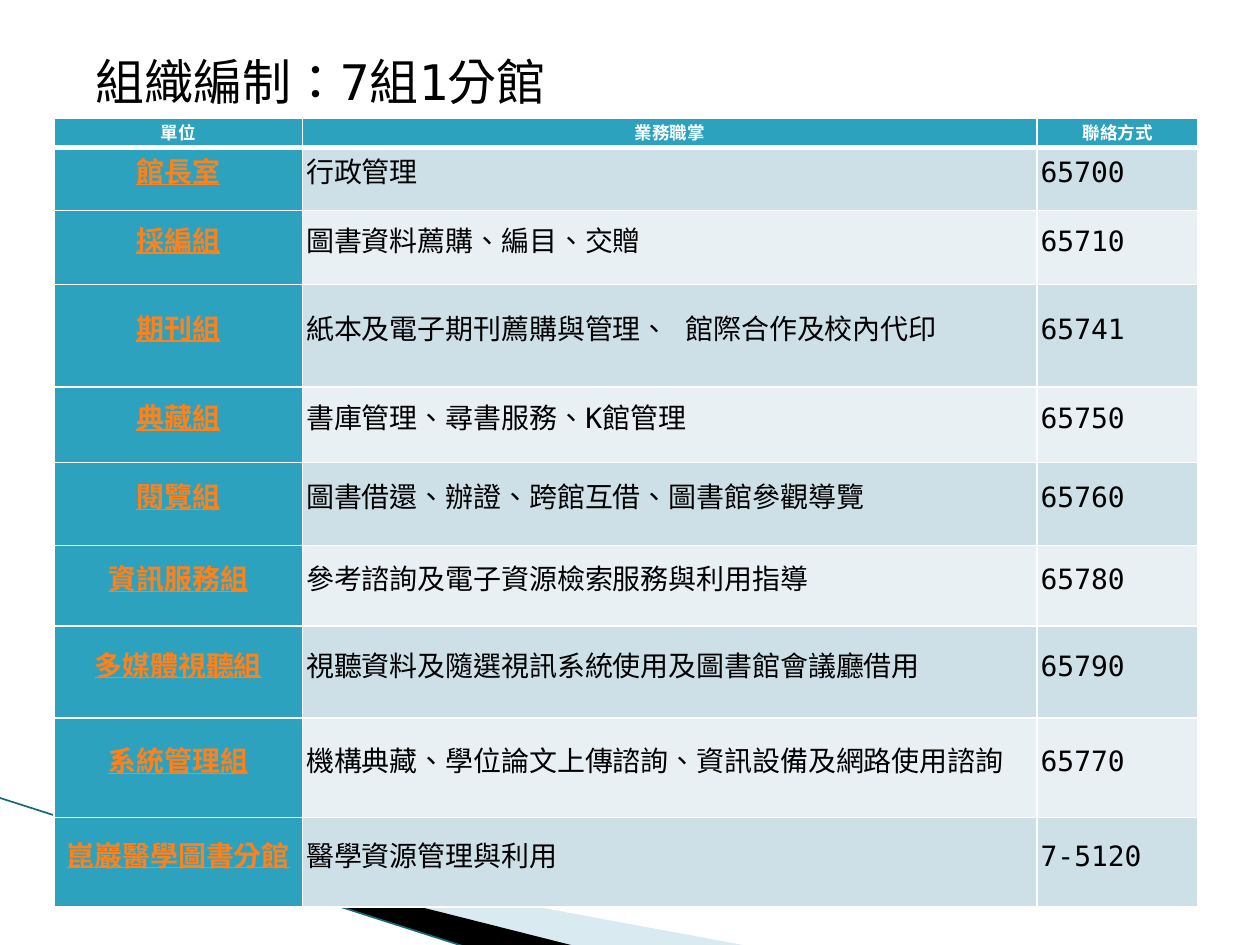
import pptx
import pptx.util
import pptx.dml.color
import pptx.enum.lang
import pptx.enum.shapes
import pptx.enum.text
import pptx.oxml.ns
from lxml import etree

Inches, Pt = pptx.util.Inches, pptx.util.Pt
RGBColor = pptx.dml.color.RGBColor
qn = pptx.oxml.ns.qn
PP_ALIGN = pptx.enum.text.PP_ALIGN

BLACK = RGBColor(0x00, 0x00, 0x00)
WHITE = RGBColor(0xFF, 0xFF, 0xFF)
TEAL = RGBColor(0x2D, 0xA2, 0xBF)
DARK_TEAL = RGBColor(0x16, 0x69, 0x7A)
PALE_TEAL = RGBColor(0xA0, 0xCB, 0xDC)
ORANGE = RGBColor(0xFF, 0x81, 0x19)
BANDS = RGBColor(0xCD, 0xE0, 0xE8), RGBColor(0xE8, 0xF0, 0xF4)

HEADER = ("單位", "業務職掌", "聯絡方式")
UNITS = [
    ("館長室", "行政管理", "65700"),
    ("採編組", "圖書資料薦購、編目、交贈", "65710"),
    ("期刊組", "紙本及電子期刊薦購與管理、 館際合作及校內代印", "65741"),
    ("典藏組", "書庫管理、尋書服務、K館管理", "65750"),
    ("閱覽組", "圖書借還、辦證、跨館互借、圖書館參觀導覽", "65760"),
    ("資訊服務組", "參考諮詢及電子資源檢索服務與利用指導", "65780"),
    ("多媒體視聽組", "視聽資料及隨選視訊系統使用及圖書館會議廳借用", "65790"),
    ("系統管理組", "機構典藏、學位論文上傳諮詢、資訊設備及網路使用諮詢", "65770"),
    ("崑巖醫學圖書分館", "醫學資源管理與利用", "7-5120"),
]
COL_WIDTHS = (1.97, 5.83, 1.28)
ROW_HEIGHTS = (0.23, 0.5, 0.59, 0.81, 0.6, 0.66, 0.64, 0.73, 0.79, 0.71)

HEADER_FORMAT = {"size": Pt(10), "bold": True, "color": WHITE}
UNIT_FORMAT = {"size": Pt(16), "bold": True, "underline": True, "color": ORANGE}
BODY_FORMAT = {"size": Pt(16), "bold": False, "color": BLACK}


class SlideBuilder:
    font = "DejaVu Sans Mono"
    cell_format = {
        "margin_left": Inches(0.03), "margin_right": Inches(0.03),
        "margin_top": Inches(0.02), "margin_bottom": Inches(0.02),
        "vertical_anchor": pptx.enum.text.MSO_ANCHOR.MIDDLE,
    }

    def __init__(self, slide):
        self.s = slide

    def run(self, p, text, formats):
        r = p.add_run()
        r.text = text
        r.font.name = self.font
        r.font.language_id = pptx.enum.lang.MSO_LANGUAGE_ID.TRADITIONAL_CHINESE
        for name, value in formats.items():
            if name == "color":
                r.font.color.rgb = value
            else:
                setattr(r.font, name, value)
        etree.SubElement(r.font._element, qn("a:ea"), typeface=self.font)

    def text(self, left, top, width, height, text, formats):
        tf = self.s.shapes.add_textbox(
            Inches(left), Inches(top), Inches(width), Inches(height)).text_frame
        tf.word_wrap = True
        self.run(tf.paragraphs[0], text, formats)

    def polygon(self, points, color, alpha=100):
        start, *rest = [(Inches(x), Inches(y)) for x, y in points]
        fb = self.s.shapes.build_freeform(*start)
        fb.add_line_segments(rest)
        sp = fb.convert_to_shape()
        sp.shadow.inherit = False
        sp.line.fill.background()
        sp.fill.solid()
        sp.fill.fore_color.rgb = color
        if alpha < 100:
            clr = sp._element.spPr.find(".//" + qn("a:srgbClr"))
            etree.SubElement(clr, qn("a:alpha"), val=str(alpha * 1000))

    def line(self, x1, y1, x2, y2, color, width):
        sp = self.s.shapes.add_connector(
            pptx.enum.shapes.MSO_CONNECTOR.STRAIGHT,
            Inches(x1), Inches(y1), Inches(x2), Inches(y2))
        sp.line.color.rgb = color
        sp.line.width = Pt(width)
        etree.SubElement(sp._element.spPr, qn("a:effectLst"))

    def borders(self, cell, widths):
        tcPr = cell._tc.get_or_add_tcPr()
        for i, (side, width) in enumerate(widths.items()):
            ln = etree.Element(qn("a:ln" + side), w=str(Pt(width)))
            fill = etree.SubElement(ln, qn("a:solidFill"))
            etree.SubElement(fill, qn("a:srgbClr"), val=str(WHITE))
            tcPr.insert(i, ln)

    def cell(self, cell, text, fill, formats, align, widths):
        for name, value in self.cell_format.items():
            setattr(cell, name, value)
        cell.fill.solid()
        cell.fill.fore_color.rgb = fill
        self.borders(cell, widths)
        p = cell.text_frame.paragraphs[0]
        p.alignment = align
        p.line_spacing = Pt(12)
        self.run(p, text, formats)

    def table(self, left, top, rows):
        tbl = self.s.shapes.add_table(
            len(rows), len(COL_WIDTHS), Inches(left), Inches(top),
            Inches(sum(COL_WIDTHS)), Inches(sum(ROW_HEIGHTS))).table
        for col, width in zip(tbl.columns, COL_WIDTHS):
            col.width = Inches(width)
        for row, height in zip(tbl.rows, ROW_HEIGHTS):
            row.height = Inches(height)
        for i, row in enumerate(rows):
            # A thick rule separates the header from the body
            widths = {"L": 1, "R": 1, "T": 3 if i == 1 else 1, "B": 3 if i == 0 else 1}
            for j, text in enumerate(row):
                if i == 0:
                    style = TEAL, HEADER_FORMAT, PP_ALIGN.CENTER
                elif j == 0:
                    style = TEAL, UNIT_FORMAT, PP_ALIGN.CENTER
                else:
                    style = BANDS[(i - 1) % 2], BODY_FORMAT, PP_ALIGN.LEFT
                self.cell(tbl.cell(i, j), text, *style, widths)


def main():
    prs = pptx.Presentation()
    prs.slide_width, prs.slide_height = Inches(10), Inches(7.5)
    b = SlideBuilder(prs.slides.add_slide(prs.slide_layouts[6]))

    # Corner decoration
    b.polygon([(0.55, 6.51), (5.95, 7.51), (4.56, 7.51), (0.55, 6.5)], PALE_TEAL, 40)
    b.polygon([(0.53, 6.49), (4.57, 7.51), (3.72, 7.52), (0.54, 6.5)], BLACK)
    b.line(-0.01, 6.33, 3.71, 7.52, DARK_TEAL, 0.95)

    # Title
    b.text(0.66, 0.36, 8.74, 0.57, "組織編制：7組1分館", {"size": Pt(28), "color": BLACK})

    # Units, duties and extensions
    b.table(0.43, 0.94, [HEADER] + UNITS)

    prs.save("out.pptx")


if __name__ == "__main__":
    main()
